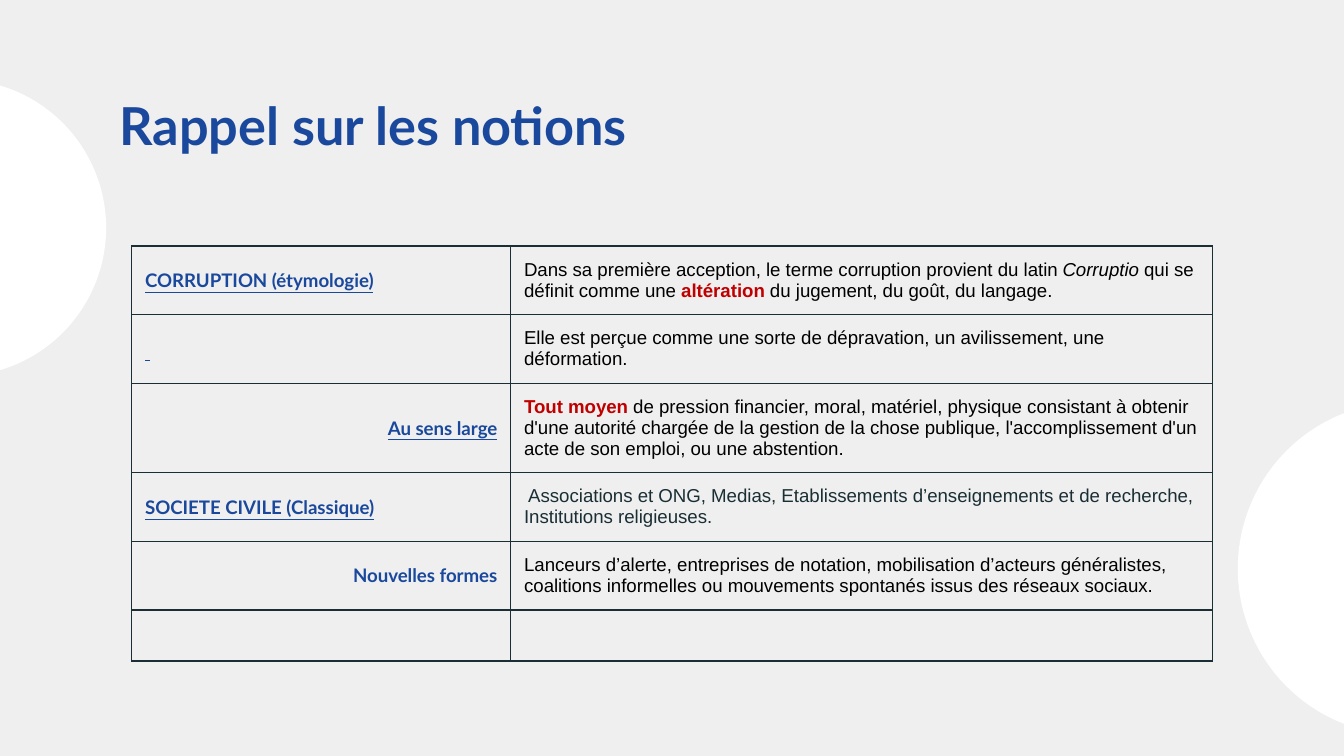
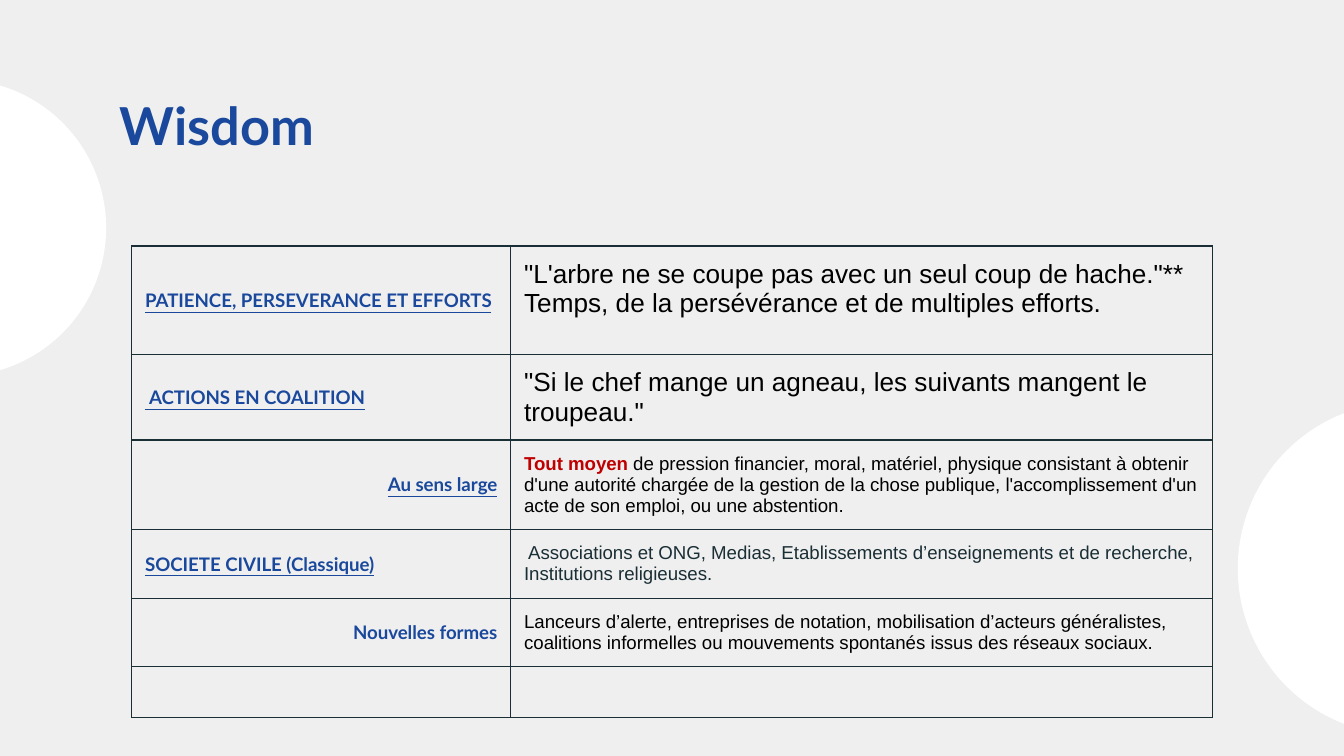
from dataclasses import dataclass

from lxml.etree import SubElement
from pptx import Presentation
from pptx.dml.color import RGBColor
from pptx.enum.shapes import MSO_SHAPE
from pptx.enum.text import MSO_ANCHOR, PP_ALIGN
from pptx.oxml.ns import qn
from pptx.util import Inches, Pt


@dataclass(frozen=True)
class Theme:
    back: str = "EFEFEF"
    disc: str = "FFFFFF"
    blue: str = "19489C"
    ink: str = "1A2E35"
    black: str = "000000"
    red: str = "C00000"
    head: str = "Lato"
    body: str = "Arial"
    title: int = 28
    quote: int = 14
    text: int = 10
    after: int = 16
    rule: float = 0.75


T = Theme()

# Run styles: font, size, colour, bold, italic, underline
STYLES = {
    "title": (T.head, T.title, T.blue, True, False, False),
    "key": (T.head, T.text, T.blue, True, False, True),
    "plain key": (T.head, T.text, T.blue, True, False, False),
    "text": (T.body, T.text, T.black, False, False, False),
    "latin": (T.body, T.text, T.black, False, True, False),
    "strong": (T.body, T.text, T.red, True, False, False),
    "soft": (T.body, T.text, T.ink, False, False, False),
    "quote": (T.body, T.quote, T.black, False, False, False),
}


@dataclass(frozen=True)
class Row:
    label: str = ""
    paras: tuple = ()
    style: str = "key"
    right: bool = False
    after: int = T.after
    foot: float = 0.1


COMMON = [
    Row("Au sens large", ((
        ("Tout moyen", "strong"),
        (" de pression financier, moral, matériel, physique consistant à obtenir "
         "d'une autorité chargée de la gestion de la chose publique, "
         "l'accomplissement d'un acte de son emploi, ou une abstention.", "text"),
    ),), right=True),
    Row("SOCIETE CIVILE (Classique)", ((
        (" Associations et ONG, Medias, Etablissements d’enseignements et de "
         "recherche, Institutions religieuses.", "soft"),
    ),)),
    Row("Nouvelles formes", ((
        ("Lanceurs d’alerte, entreprises de notation, mobilisation d’acteurs "
         "généralistes, coalitions informelles ou mouvements spontanés issus des "
         "réseaux sociaux.", "text"),
    ),), style="plain key", right=True, after=0),
    Row(),
]

NOTIONS = [
    Row("CORRUPTION (étymologie)", ((
        ("Dans sa première acception, le terme corruption provient du latin ", "text"),
        ("Corruptio", "latin"),
        (" qui se définit comme une ", "text"),
        ("altération", "strong"),
        (" du jugement, du goût, du langage.", "text"),
    ),)),
    Row(" ", ((
        ("Elle est perçue comme une sorte de dépravation, un avilissement, une "
         "déformation.", "text"),
    ),)),
]

WISDOM = [
    Row("PATIENCE, PERSEVERANCE ET EFFORTS", (
        (("\"L'arbre ne se coupe pas avec un seul coup de hache.\"**", "quote"),),
        (("Temps, de la persévérance et de multiples efforts.", "quote"),),
    ), after=0, foot=0.27),
    Row(" ACTIONS EN COALITION", ((
        ("\"Si le chef mange un agneau, les suivants mangent le troupeau.\"", "quote"),
    ),)),
]

# Title, rows, table height
SLIDES = [
    ("Rappel sur les notions", NOTIONS + COMMON, 3.22),
    ("Wisdom", WISDOM + COMMON, 3.65),
]

# Left, top, diameter, start and end angle, mirrored
DISCS = [
    (-1.42, 0.59, 2.21, 162.29, 54.49, False),
    (9.21, 2.99, 2.48, 162.29, 53.93, True),
]
WIDE = Inches(10)
TITLE = (0.79, 0.59, 8.42, 0.63)
LEFT, TOP, COLS, HIGH = 0.98, 1.83, (2.82, 5.22), 0.38
PAD = 0.1


def add_run(para, text, style):
    run = para.add_run()
    run.text = text
    font = run.font
    font.name, size, tint, font.bold, font.italic, font.underline = STYLES[style]
    font.size = Pt(size)
    font.color.rgb = RGBColor.from_string(tint)


def set_title(slide, text):
    title = slide.shapes.title
    title.left, title.top, title.width, title.height = map(Inches, TITLE)
    frame = title.text_frame
    frame.margin_left = frame.margin_right = Inches(PAD)
    frame.margin_top = frame.margin_bottom = Inches(PAD)
    frame.vertical_anchor = MSO_ANCHOR.TOP
    frame.word_wrap = True
    para = frame.paragraphs[0]
    para.alignment = PP_ALIGN.LEFT
    add_run(para, text, "title")


def add_discs(slide, layout):
    """Draw the side discs, then hand them to the layout."""
    for num, (x, y, size, start, end, flip) in enumerate(DISCS):
        disc = slide.shapes.add_shape(
            MSO_SHAPE.PIE, *map(Inches, (x, y, size, size)))
        disc.adjustments[0], disc.adjustments[1] = start, end
        disc.shadow.inherit = False
        disc.fill.solid()
        disc.fill.fore_color.rgb = RGBColor.from_string(T.disc)
        disc.line.fill.background()
        node = disc._element
        if flip:
            node.spPr.find(qn("a:xfrm")).set("flipH", "1")
        node.nvSpPr.cNvPr.set("id", str(20 + num))
        layout.shapes._spTree.insert(2 + num, node)


def set_cell(cell, paras, align, after=0, foot=PAD):
    cell.margin_left = cell.margin_right = cell.margin_top = Inches(PAD)
    cell.margin_bottom = Inches(foot)
    cell.vertical_anchor = MSO_ANCHOR.MIDDLE
    props = cell._tc.get_or_add_tcPr()
    for side in ("lnL", "lnR", "lnT", "lnB"):
        line = SubElement(props, qn(f"a:{side}"), w=str(Pt(T.rule)))
        fill = SubElement(line, qn("a:solidFill"))
        SubElement(fill, qn("a:srgbClr"), val=T.ink)
    cell.fill.background()

    frame = cell.text_frame
    for num, runs in enumerate(paras or ((),)):
        para = frame.add_paragraph() if num else frame.paragraphs[0]
        para.alignment = align
        para.space_after = Pt(after)
        for text, style in runs:
            add_run(para, text, style)
        if not runs:
            SubElement(para._p, qn("a:endParaRPr"), sz=str(T.text * 100))


def add_grid(slide, rows, height):
    frame = slide.shapes.add_table(
        len(rows), len(COLS), Inches(LEFT), Inches(TOP),
        Inches(sum(COLS)), Inches(HIGH * len(rows)))
    table = frame.table
    table.first_row = table.horz_banding = False
    for col, width in zip(table.columns, COLS):
        col.width = Inches(width)
    for num, row in enumerate(rows):
        table.rows[num].height = Inches(HIGH)
        label = (((row.label, row.style),),) if row.label else ()
        side = PP_ALIGN.RIGHT if row.right else PP_ALIGN.LEFT
        set_cell(table.cell(num, 0), label, side)
        set_cell(table.cell(num, 1), row.paras, PP_ALIGN.LEFT, row.after, row.foot)
    frame.height = Inches(height)


def main():
    deck = Presentation()
    deck.slide_width, deck.slide_height = WIDE, WIDE * 9 // 16
    layout = deck.slide_layouts[5]
    layout.background.fill.solid()
    layout.background.fill.fore_color.rgb = RGBColor.from_string(T.back)
    for num, (title, rows, height) in enumerate(SLIDES):
        slide = deck.slides.add_slide(layout)
        if num == 0:
            add_discs(slide, layout)
        set_title(slide, title)
        add_grid(slide, rows, height)
    deck.save("out.pptx")


if __name__ == "__main__":
    main()
